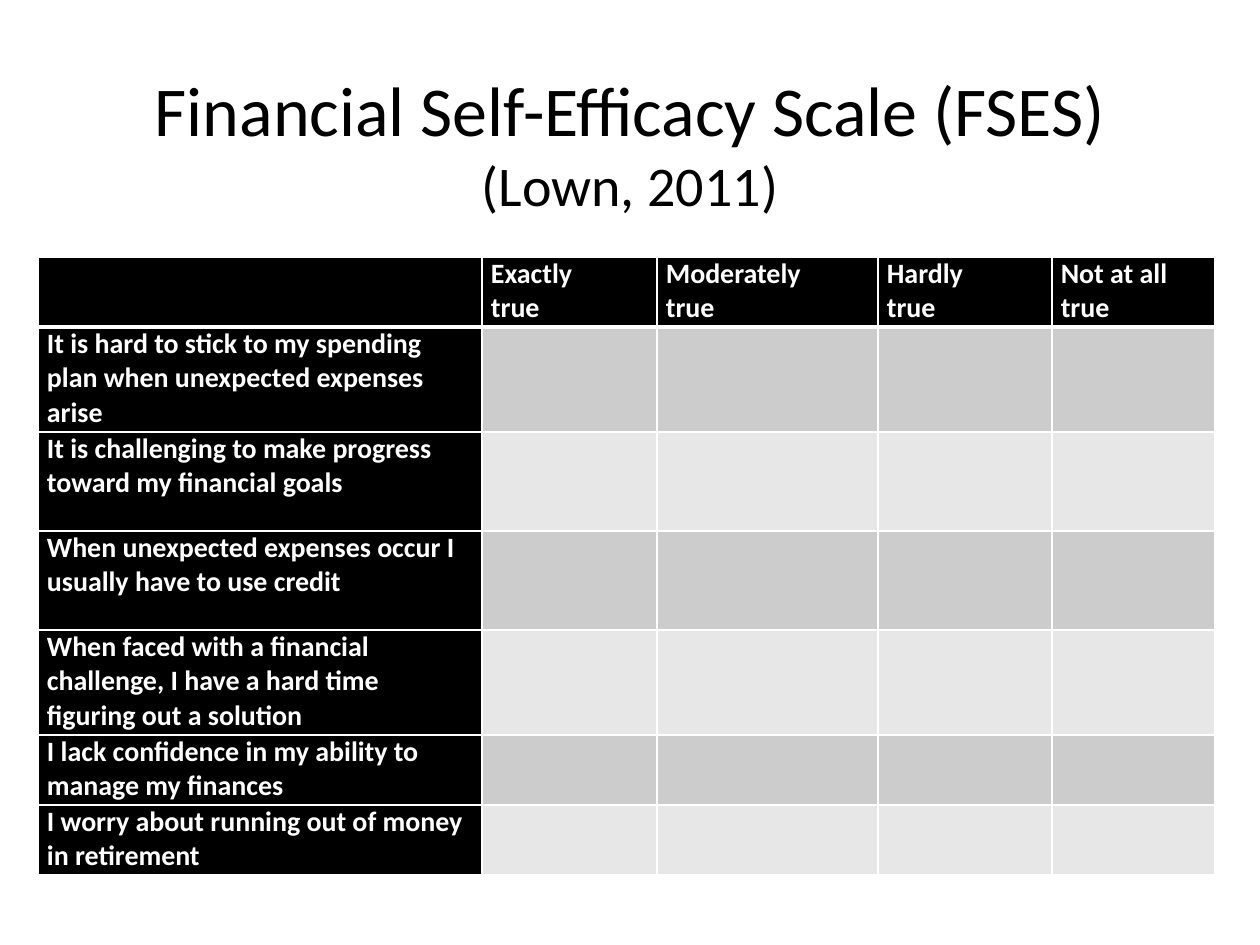
"""Builds the Financial Self-Efficacy Scale slide with its rating table."""
from lxml.etree import SubElement
from pptx import Presentation
from pptx.dml.color import RGBColor
from pptx.enum.text import MSO_ANCHOR as Anchor, MSO_AUTO_SIZE as AutoSize, PP_ALIGN as Align
from pptx.oxml.ns import qn
from pptx.util import Pt

PX = 914400 // 126
FONT, BLACK, WHITE = "Calibri", "000000", "FFFFFF"
BANDS = ("CCCCCC", "E7E7E7")

TITLE = (("Financial Self-Efficacy Scale (FSES)", 40), ("(Lown, 2011)", 32))
ANSWERS = (("Exactly", "true"), ("Moderately", "true"), ("Hardly", "true"), ("Not at all", "true"))
STATEMENTS = (
    "It is hard to stick to my spending plan when unexpected expenses arise",
    "It is challenging to make progress toward my financial goals",
    "When unexpected expenses occur I usually have to use credit",
    "When faced with a financial challenge, I have a hard time figuring out a solution",
    "I lack confidence in my ability to manage my finances",
    "I worry about running out of money in retirement",
)
TITLE_BOX = (63, 63, 1134, 158)
TABLE_ORIGIN = (38, 257)
COLUMN_WIDTHS = (444, 175, 221, 174, 163)
ROW_HEIGHTS = (70, 105, 99, 99, 105, 70, 70)


def px(*lengths):
    return [length * PX for length in lengths]


def color(value):
    return RGBColor.from_string(value)


def add_run(paragraph, text, size, ink, bold=False):
    run = paragraph.add_run()
    run.text = text
    run.font.name, run.font.size, run.font.bold = FONT, Pt(size), bold
    run.font.color.rgb = color(ink)


def set_borders(cell, bottom_width):
    properties = cell._tc.get_or_add_tcPr()
    widths = {"a:lnL": 1, "a:lnR": 1, "a:lnT": 1, "a:lnB": bottom_width}
    for position, (tag, width) in enumerate(widths.items()):
        line = SubElement(properties, qn(tag), w=str(Pt(width)))
        properties.insert(position, line)
        SubElement(SubElement(line, qn("a:solidFill")), qn("a:srgbClr"), val=WHITE)


def fill_cell(cell, lines, fill, bottom_width):
    cell.fill.solid()
    cell.fill.fore_color.rgb = color(fill)
    set_borders(cell, bottom_width)
    cell.margin_left, cell.margin_right = px(9, 9)
    cell.margin_top = cell.margin_bottom = 0
    frame = cell.text_frame
    for index, text in enumerate(lines):
        paragraph = frame.add_paragraph() if index else frame.paragraphs[0]
        add_run(paragraph, text, 16, WHITE, bold=True)


def add_title(slide):
    title = slide.shapes.title
    title.left, title.top, title.width, title.height = px(*TITLE_BOX)
    frame = title.text_frame
    frame.word_wrap, frame.auto_size = True, AutoSize.NONE
    frame.vertical_anchor = Anchor.MIDDLE
    paragraph = frame.paragraphs[0]
    paragraph.alignment = Align.CENTER
    for index, (text, size) in enumerate(TITLE):
        if index:
            paragraph.add_line_break()
        add_run(paragraph, text, size, BLACK)


def add_rating_table(slide):
    rows = [((), *ANSWERS)] + [((statement,), *[()] * len(ANSWERS)) for statement in STATEMENTS]
    size = (sum(COLUMN_WIDTHS), sum(ROW_HEIGHTS))
    table = slide.shapes.add_table(len(rows), len(COLUMN_WIDTHS), *px(*TABLE_ORIGIN, *size)).table
    for column, width in zip(table.columns, px(*COLUMN_WIDTHS)):
        column.width = width
    for row, height in zip(table.rows, px(*ROW_HEIGHTS)):
        row.height = height
    for row_index, row in enumerate(rows):
        for column_index, lines in enumerate(row):
            is_header = row_index == 0 or column_index == 0
            fill = BLACK if is_header else BANDS[(row_index - 1) % 2]
            fill_cell(table.cell(row_index, column_index), lines, fill, 1 if row_index else 3)


def main():
    presentation = Presentation()
    presentation.slide_width, presentation.slide_height = px(1260, 945)
    slide = presentation.slides.add_slide(presentation.slide_layouts[5])
    add_title(slide)
    add_rating_table(slide)
    presentation.save("out.pptx")


if __name__ == "__main__":
    main()
